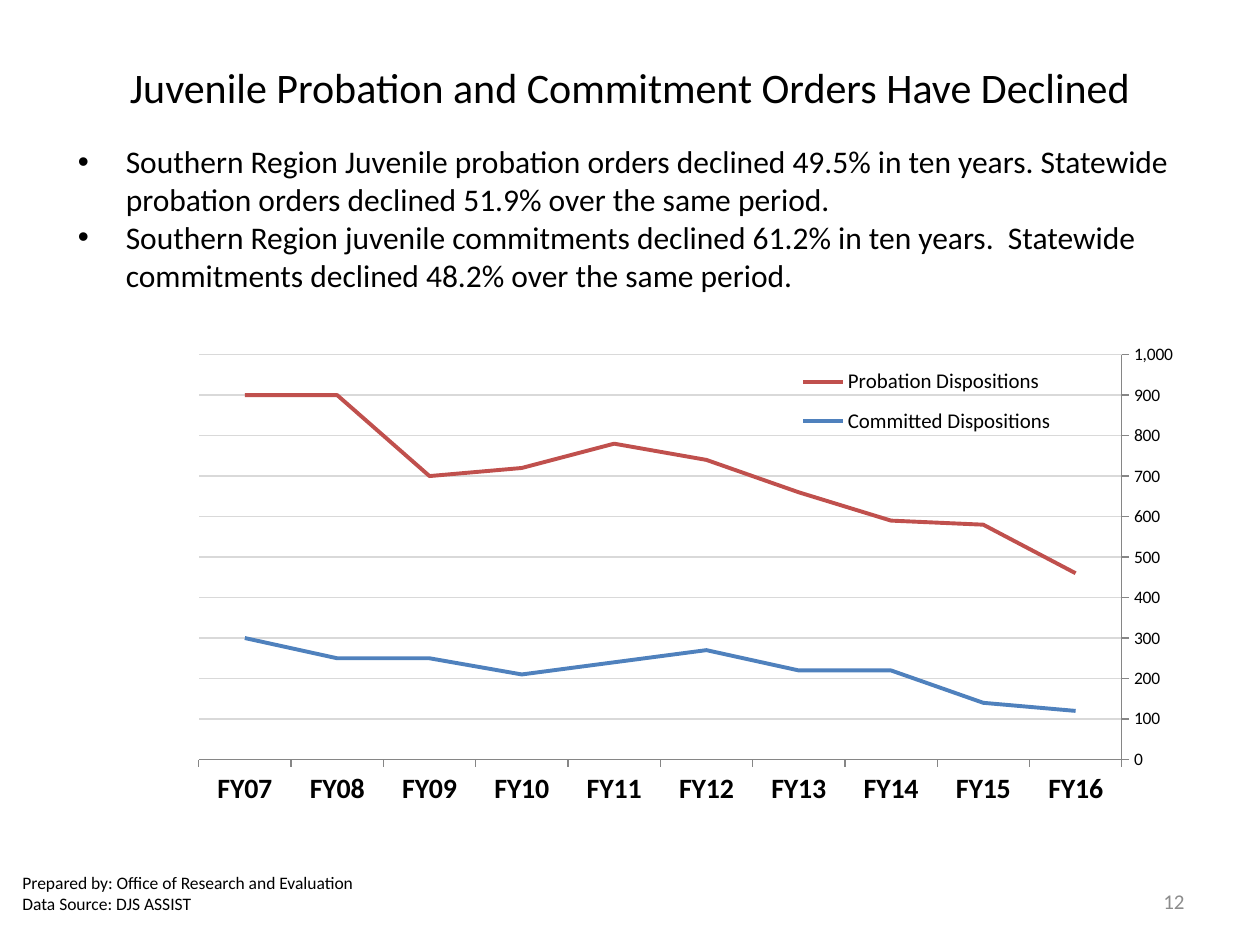
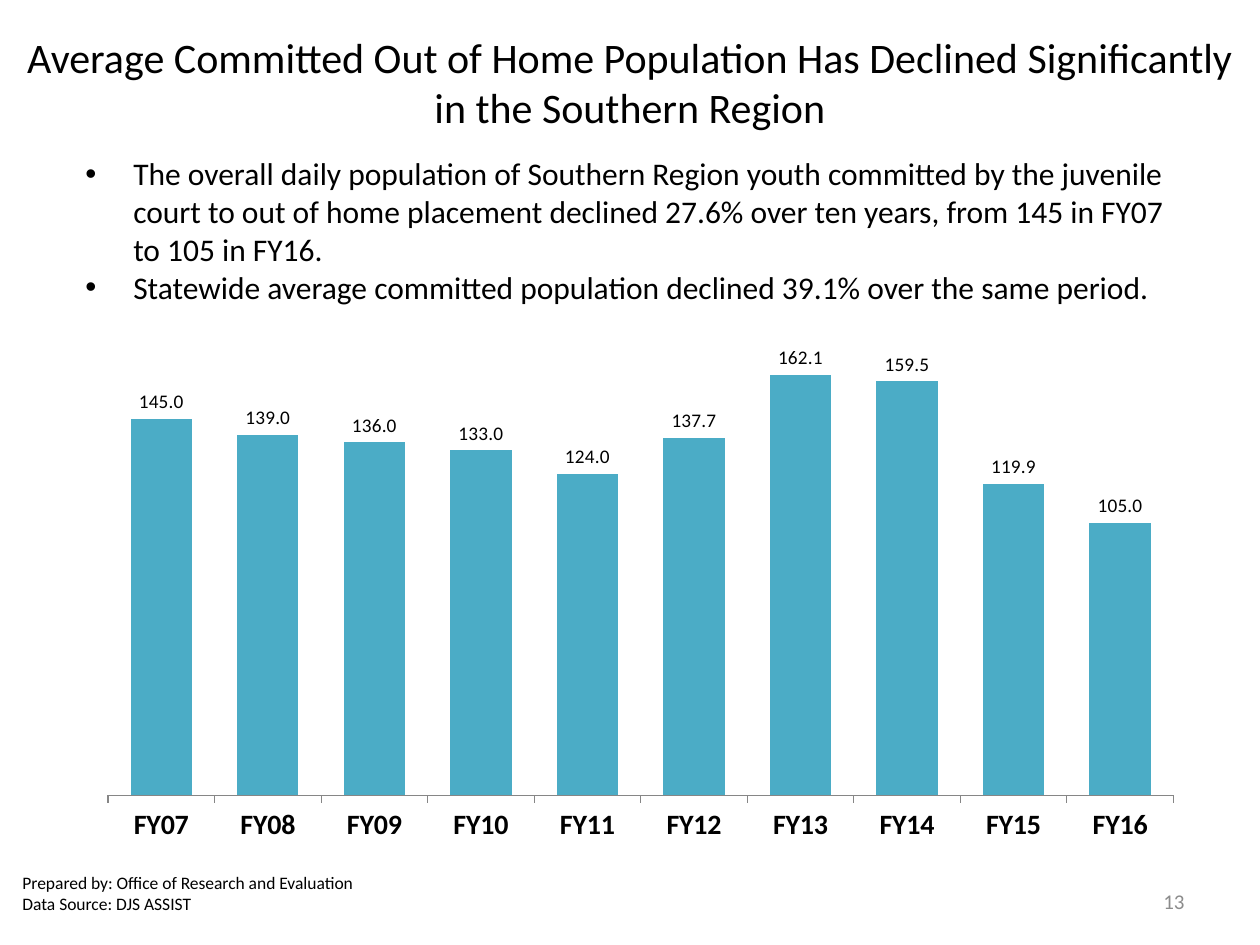
from pptx import Presentation
from pptx.chart.data import CategoryChartData
from pptx.dml.color import RGBColor
from pptx.enum.chart import (XL_AXIS_CROSSES, XL_CHART_TYPE, XL_LABEL_POSITION,
                             XL_LEGEND_POSITION, XL_TICK_MARK)
from pptx.enum.text import MSO_ANCHOR, PP_ALIGN
from pptx.oxml import parse_xml
from pptx.oxml.ns import nsdecls, qn
from pptx.util import Inches, Pt

LEFT, CENTER, RIGHT = PP_ALIGN.LEFT, PP_ALIGN.CENTER, PP_ALIGN.RIGHT
MIDDLE = MSO_ANCHOR.MIDDLE
LINE, COLUMN = XL_CHART_TYPE.LINE, XL_CHART_TYPE.COLUMN_CLUSTERED
AT_MAXIMUM = XL_AXIS_CROSSES.MAXIMUM
TICK_OUT, TICK_NONE = XL_TICK_MARK.OUTSIDE, XL_TICK_MARK.NONE
LEGEND_RIGHT = XL_LEGEND_POSITION.RIGHT
OUTSIDE_END = XL_LABEL_POSITION.OUTSIDE_END

BLACK = RGBColor(0x00, 0x00, 0x00)
WHITE = RGBColor(0xFF, 0xFF, 0xFF)
PAGE_GRAY = RGBColor(0x8C, 0x8C, 0x8C)
AXIS_GRAY = RGBColor(0x86, 0x86, 0x86)
GRID_GRAY = RGBColor(0xD9, 0xD9, 0xD9)
PROBATION_RED = RGBColor(0xC0, 0x50, 0x4D)
COMMITTED_BLUE = RGBColor(0x4F, 0x81, 0xBD)
POPULATION_TEAL = RGBColor(0x4B, 0xAC, 0xC6)

# Charts list the latest year first; the reversed axis shows them in time order
FISCAL_YEARS = [f"FY{year:02d}" for year in range(16, 6, -1)]
CREDITS = ["Prepared by: Office of Research and Evaluation",
           "Data Source: DJS ASSIST"]


def set_layout(parent, index, x, y, w, h, inner=False):
    """Place a plot area or legend by fractions of its chart."""
    for old in parent.findall(qn("c:layout")):
        parent.remove(old)
    target = '<c:layoutTarget val="inner"/>' if inner else ""
    parent.insert(index, parse_xml(
        f'<c:layout {nsdecls("c")}><c:manualLayout>{target}'
        '<c:xMode val="edge"/><c:yMode val="edge"/>'
        f'<c:x val="{x}"/><c:y val="{y}"/><c:w val="{w}"/><c:h val="{h}"/>'
        '</c:manualLayout></c:layout>'))


class Deck:
    font = "Calibri"

    def __init__(self):
        self.prs = Presentation()
        self.prs.slide_width, self.prs.slide_height = Inches(10), Inches(7.5)
        self.slide = None

    def style(self, font, size, color=BLACK, bold=False):
        font.name, font.size, font.bold = self.font, Pt(size), bold
        font.color.rgb = color

    def text(self, box, lines, size, color=BLACK, align=LEFT):
        shape = self.slide.shapes.add_textbox(*map(Inches, box))
        frame = shape.text_frame
        frame.word_wrap, frame.vertical_anchor = True, MIDDLE
        for number, line in enumerate(lines):
            paragraph = frame.add_paragraph() if number else frame.paragraphs[0]
            paragraph.alignment = align
            run = paragraph.add_run()
            run.text = line
            self.style(run.font, size, color)
        return frame

    def page(self, number, title, title_height):
        """Start a slide with its title, credits and page number."""
        self.slide = self.prs.slides.add_slide(self.prs.slide_layouts[6])
        background = self.slide.background.fill
        background.solid()
        background.fore_color.rgb = WHITE
        self.text((0, 0.3, 10, title_height), [title], 24, align=CENTER)
        self.text((7.17, 6.95, 2.33, 0.4), [str(number)], 12, PAGE_GRAY, RIGHT)
        self.text((0.08, 6.83, 2.92, 0.52), CREDITS, 10)

    def bullets(self, box, lines, bottom_inset=0.05):
        frame = self.text(box, lines, 18)
        frame.margin_bottom = Inches(bottom_inset)
        for paragraph in frame.paragraphs:
            props = paragraph._p.get_or_add_pPr()
            props.set("marL", str(Inches(0.38)))
            props.set("indent", str(-Inches(0.38)))
            props.append(parse_xml(f'<a:buFont {nsdecls("a")} typeface="Arial"/>'))
            props.append(parse_xml(f'<a:buChar {nsdecls("a")} char="•"/>'))

    def chart(self, kind, box, plot_box, series, maximum, number_format):
        """Add a chart over the fiscal years; series maps names to values."""
        data = CategoryChartData(number_format=number_format)
        data.categories = FISCAL_YEARS
        for name, values in series.items():
            data.add_series(name, values)
        chart = self.slide.shapes.add_chart(kind, *map(Inches, box), data).chart
        chart.has_title = chart.has_legend = False
        self.style(chart.font, 10)
        chart.plots[0].vary_by_categories = False
        set_layout(chart._chartSpace.chart.plotArea, 0, *plot_box, inner=True)

        years = chart.category_axis
        years.reverse_order, years.crosses = True, AT_MAXIMUM
        self.style(years.tick_labels.font, 16, bold=True)
        counts = chart.value_axis
        counts.minimum_scale, counts.maximum_scale = 0, maximum
        counts.tick_labels.number_format = number_format
        counts.tick_labels.number_format_is_linked = False
        counts.has_major_gridlines = False
        for axis in (years, counts):
            axis.major_tick_mark, axis.minor_tick_mark = TICK_OUT, TICK_NONE
            axis.format.line.color.rgb = AXIS_GRAY
            axis.format.line.width = Pt(0.75)
        return chart

    def line_chart(self, box, plot_box, legend_box, series, colors):
        chart = self.chart(LINE, box, plot_box, series, 1000, r"#,##0_);\(#,##0\)")
        counts = chart.value_axis
        counts.major_unit, counts.has_major_gridlines = 100, True
        grid = counts.major_gridlines.format.line
        grid.color.rgb, grid.width = GRID_GRAY, Pt(0.75)
        for line, color in zip(chart.plots[0].series, colors):
            line.smooth = False
            line.format.line.color.rgb = color
            line.format.line.width = Pt(2.25)
            line.marker.style = None
            line.marker.format.fill.background()
            line._element.find(qn("c:marker")).insert(
                0, parse_xml(f'<c:symbol {nsdecls("c")} val="none"/>'))
        chart.has_legend = True
        legend = chart.legend
        legend.position, legend.include_in_layout = LEGEND_RIGHT, True
        self.style(legend.font, 12)
        set_layout(legend._element, 1, *legend_box)

    def column_chart(self, box, plot_box, series, color):
        chart = self.chart(COLUMN, box, plot_box, series, 180, "0.0")
        chart.value_axis.visible = False
        plot = chart.plots[0]
        plot.gap_width, plot.overlap = 74, 52
        fill = plot.series[0].format.fill
        fill.solid()
        fill.fore_color.rgb = color
        plot.has_data_labels = True
        labels = plot.data_labels
        labels.show_value, labels.position = True, OUTSIDE_END
        labels.number_format, labels.number_format_is_linked = "0.0", False
        self.style(labels.font, 11)


def main():
    deck = Deck()

    # Probation and commitment orders
    deck.page(12, "Juvenile Probation and Commitment Orders Have Declined", 0.78)
    deck.bullets((0.52, 1.17, 9.08, 1.42), [
        "Southern Region Juvenile probation orders declined 49.5% in ten years. "
        "Statewide probation orders declined 51.9% over the same period.",
        "Southern Region juvenile commitments declined 61.2% in ten years.  "
        "Statewide commitments declined 48.2% over the same period.",
    ], bottom_inset=0.35)
    deck.line_chart(
        (1.17, 2.58, 8.17, 3.92), (0.05, 0.06, 0.9, 0.82), (0.63, 0.06, 0.26, 0.19),
        {"Probation Dispositions":
            [460, 580, 590, 660, 740, 780, 720, 700, 900, 900],
         "Committed Dispositions":
            [120, 140, 220, 220, 270, 240, 210, 250, 250, 300]},
        [PROBATION_RED, COMMITTED_BLUE])

    # Committed out of home population
    deck.page(13, "Average Committed Out of Home Population Has Declined "
                  "Significantly in the Southern Region", 0.7)
    deck.bullets((0.58, 1.07, 9, 1.51), [
        "The overall daily population of Southern Region youth committed by the "
        "juvenile court to out of home placement declined 27.6% over ten years, "
        "from 145 in FY07 to 105 in FY16.",
        "Statewide average committed population declined 39.1% over the same period.",
    ])
    deck.column_chart(
        (0.68, 2.33, 8.9, 4.58), (0.02, 0.06, 0.95, 0.81),
        {"Series 1": [105, 119.9, 159.5, 162.1, 137.7, 124, 133, 136, 139, 145]},
        POPULATION_TEAL)

    deck.prs.save("out.pptx")


if __name__ == "__main__":
    main()
